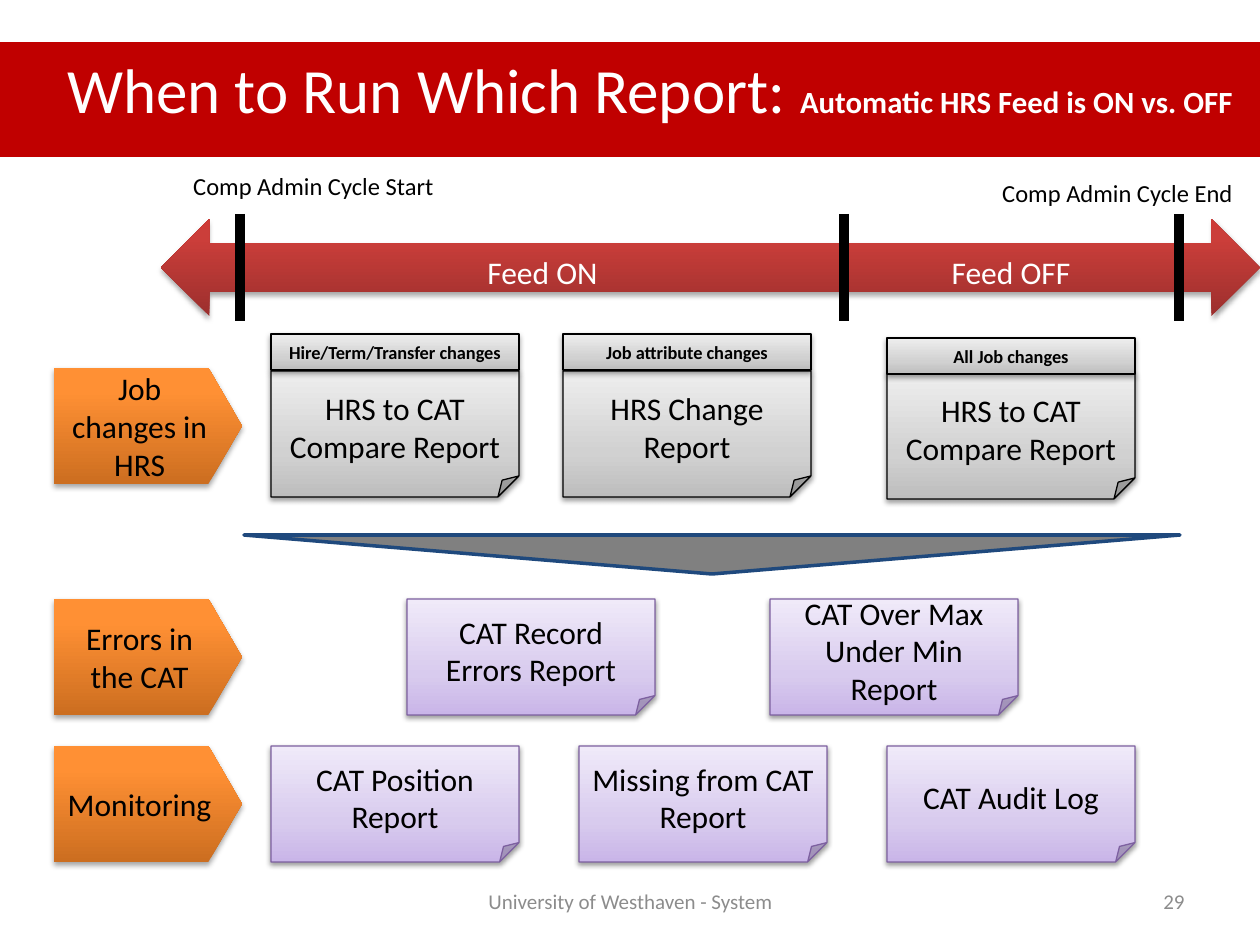
from lxml.etree import SubElement
from pptx import Presentation
from pptx.dml.color import RGBColor
from pptx.enum.shapes import MSO_CONNECTOR, MSO_SHAPE
from pptx.enum.text import MSO_ANCHOR, MSO_AUTO_SIZE, PP_ALIGN
from pptx.oxml.ns import qn
from pptx.util import Pt

EMU_PER_PX = 914400 / 126
FONT = "Calibri"
COLORS = {
    "band": "C00000", "white": "FFFFFF", "black": "000000", "muted": "8C8C8C",
    "purple_line": "7D60A0", "funnel": "808080", "funnel_line": "1F497D",
}
GRADIENTS = {
    "red": [(0, "9C2F2D"), (80, "CB3E3A"), (100, "CE3B37")],
    "orange": [(0, "CC6E20"), (80, "FF9034"), (100, "FF9136")],
    "gray": [(0, "BDBDBD"), (35, "D1D1D1"), (100, "EEEEEE")],
    "purple": [(0, "C9B5E8"), (35, "D8CBEE"), (100, "F0EAF9")],
}
STRONG_SHADOW = (35, 1.8)
SOFT_SHADOW = (38, 1.6)

TITLE = [("When to Run Which Report: ", 36, False),
         ("Automatic HRS Feed is ON vs. OFF", 17.6, True)]
CAPTIONS = [
    ("Feed ON", (461, 247, 163, 51), 18, "white"),
    ("Feed OFF", (901, 247, 220, 51), 18, "white"),
    ("Comp Admin Cycle Start", (161, 165, 305, 43), 14, "black"),
    ("Comp Admin Cycle End", (981, 172, 273, 43), 14, "black"),
]
FOOTERS = [
    ("University of Westhaven - System", (431, 876, 399, 50), PP_ALIGN.CENTER),
    ("29", (903, 876, 294, 50), PP_ALIGN.RIGHT),
]
MARKERS_X = [240, 1179, 844]
MARKER_TOP, MARKER_BOTTOM = 214, 321
STAGES = [("Job changes in HRS", 368), ("Errors in the CAT", 599), ("Monitoring", 746)]
STAGE_LEFT, STAGE_WIDTH, ROW_HEIGHT = 54, 188, 116
NOTE_WIDTH = 248
JOB_REPORTS = [
    ("Hire/Term/Transfer changes", "HRS to CAT Compare Report", 271, 334, 371),
    ("Job attribute changes", "HRS Change Report", 563, 334, 371),
    ("All Job changes", "HRS to CAT Compare Report", 887, 338, 373),
]
LABEL_HEIGHT, JOB_NOTE_HEIGHT = 36, 126
CAT_REPORTS = [
    (599, 407, 363, ["CAT Record Errors Report", "CAT Over Max Under Min Report"]),
    (746, 271, 308, ["CAT Position Report", "Missing from CAT Report", "CAT Audit Log"]),
]


def px(value):
    return round(value * EMU_PER_PX)


def box(bounds):
    return [px(value) for value in bounds]


def rgb(name):
    return RGBColor.from_string(COLORS[name])


def style_run(run, size, color, bold=False):
    run.font.name = FONT
    run.font.size = Pt(size)
    run.font.bold = bold
    run.font.color.rgb = rgb(color)


def write(shape, text, size, color="black", bold=False,
          align=PP_ALIGN.CENTER, anchor=MSO_ANCHOR.MIDDLE):
    frame = shape.text_frame
    frame.text = text
    frame.word_wrap = True
    frame.vertical_anchor = anchor
    paragraph = frame.paragraphs[0]
    paragraph.alignment = align
    style_run(paragraph.runs[0], size, color, bold)


def add_text(shapes, text, bounds, size, color, align, anchor):
    text_box = shapes.add_textbox(*box(bounds))
    write(text_box, text, size, color, align=align, anchor=anchor)


def fill_gradient(shape, stops):
    shape.fill.gradient()
    shape.fill.gradient_angle = 90
    stop_list = shape._element.spPr.find(".//" + qn("a:gsLst"))
    for stop in list(stop_list):
        stop_list.remove(stop)
    for position, color in stops:
        stop = SubElement(stop_list, qn("a:gs"), pos=str(position * 1000))
        SubElement(stop, qn("a:srgbClr"), val=color)


def cast_shadow(shape, opacity, distance):
    effects = shape._element.spPr.find(qn("a:effectLst"))
    shadow = SubElement(effects, qn("a:outerShdw"), blurRad=str(Pt(3.1)),
                        dist=str(Pt(distance)), dir="5400000", rotWithShape="0")
    color = SubElement(shadow, qn("a:srgbClr"), val=COLORS["black"])
    SubElement(color, qn("a:alpha"), val=str(opacity * 1000))


def add_gradient_shape(shapes, kind, bounds, gradient, shadow, line=None):
    shape = shapes.add_shape(kind, *box(bounds))
    fill_gradient(shape, GRADIENTS[gradient])
    if line:
        shape.line.color.rgb = rgb(line)
        shape.line.width = Pt(0.75)
    else:
        shape.line.fill.background()
    shape.shadow.inherit = False
    cast_shadow(shape, *shadow)
    return shape


def add_note(shapes, text, bounds, gradient, line):
    note = add_gradient_shape(shapes, MSO_SHAPE.FOLDED_CORNER, bounds,
                              gradient, SOFT_SHADOW, line)
    write(note, text, 18)
    note.text_frame.margin_bottom = 0


def add_title(slide):
    title = slide.shapes.title
    title.left, title.top, title.width, title.height = box((0, 42, 1260, 115))
    title.fill.solid()
    title.fill.fore_color.rgb = rgb("band")
    frame = title.text_frame
    frame.word_wrap = True
    frame.auto_size = MSO_AUTO_SIZE.NONE
    frame.vertical_anchor = MSO_ANCHOR.TOP
    frame.margin_left, frame.margin_top, frame.margin_right = px(67), px(9), 0
    paragraph = frame.paragraphs[0]
    paragraph.alignment = PP_ALIGN.LEFT
    for text, size, bold in TITLE:
        run = paragraph.add_run()
        run.text = text
        style_run(run, size, "white", bold)


def add_timeline(shapes):
    add_gradient_shape(shapes, MSO_SHAPE.LEFT_RIGHT_ARROW, (161, 219, 1099, 97),
                       "red", STRONG_SHADOW)
    for x in MARKERS_X:
        marker = shapes.add_connector(MSO_CONNECTOR.STRAIGHT,
                                      *box((x, MARKER_TOP, x, MARKER_BOTTOM)))
        marker.line.color.rgb = rgb("black")
        marker.line.width = Pt(6)
        SubElement(marker._element.spPr, qn("a:effectLst"))
    for text, bounds, size, color in CAPTIONS:
        add_text(shapes, text, bounds, size, color, PP_ALIGN.CENTER, MSO_ANCHOR.TOP)


def add_funnel(shapes):
    funnel = shapes.add_shape(MSO_SHAPE.ISOSCELES_TRIANGLE, *box((244, 535, 936, 39)))
    funnel.rotation = 180
    funnel.fill.solid()
    funnel.fill.fore_color.rgb = rgb("funnel")
    funnel.line.color.rgb = rgb("funnel_line")
    funnel.line.width = Pt(2)
    funnel.shadow.inherit = False


def main():
    presentation = Presentation()
    presentation.slide_width, presentation.slide_height = px(1260), px(945)
    slide = presentation.slides.add_slide(presentation.slide_layouts[5])
    shapes = slide.shapes
    add_title(slide)
    add_timeline(shapes)
    for text, top in STAGES:
        stage = add_gradient_shape(shapes, MSO_SHAPE.PENTAGON,
                                   (STAGE_LEFT, top, STAGE_WIDTH, ROW_HEIGHT),
                                   "orange", STRONG_SHADOW)
        stage.adjustments[0] = 0.29
        write(stage, text, 18)
    for label_text, report, left, label_top, note_top in JOB_REPORTS:
        group = shapes.add_group_shape().shapes
        add_note(group, report, (left, note_top, NOTE_WIDTH, JOB_NOTE_HEIGHT),
                 "gray", "black")
        label = add_gradient_shape(group, MSO_SHAPE.RECTANGLE,
                                   (left, label_top, NOTE_WIDTH, LABEL_HEIGHT),
                                   "gray", SOFT_SHADOW, "black")
        write(label, label_text, 10.5, bold=True)
    add_funnel(shapes)
    for top, first_left, step, reports in CAT_REPORTS:
        for index, report in enumerate(reports):
            add_note(shapes, report,
                     (first_left + index * step, top, NOTE_WIDTH, ROW_HEIGHT),
                     "purple", "purple_line")
    for text, bounds, align in FOOTERS:
        add_text(shapes, text, bounds, 12, "muted", align, MSO_ANCHOR.MIDDLE)
    presentation.save("out.pptx")


if __name__ == "__main__":
    main()
